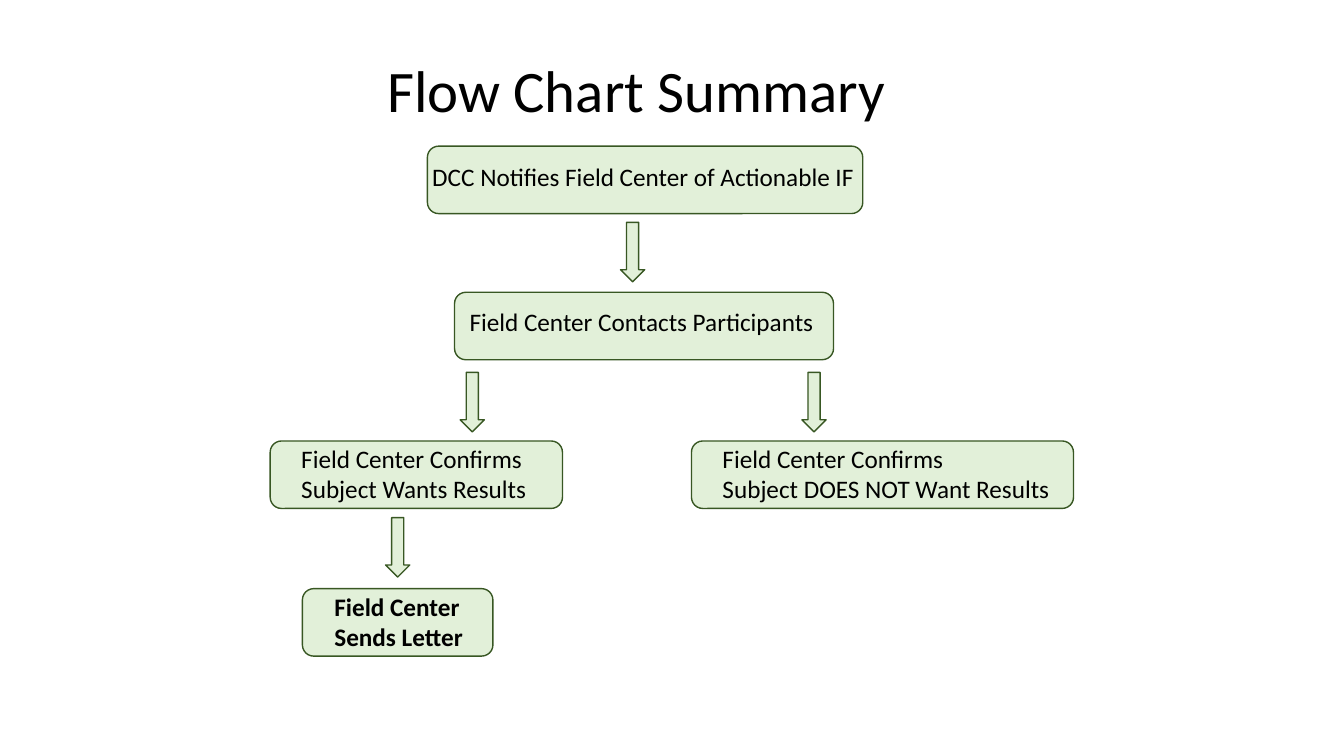
from pptx import Presentation
from pptx.dml.color import RGBColor
from pptx.enum.shapes import MSO_SHAPE
from pptx.enum.text import MSO_ANCHOR, MSO_AUTO_SIZE, PP_ALIGN
from pptx.util import Pt

FONT = "Calibri"
BLACK, PALE_GREEN, DARK_GREEN = "000000", "E2F0D9", "385723"
BOX_HEIGHT = 48.2
ARROW_LENGTH, ARROW_WIDTH = 42.5, 17.3
LABEL_HEIGHTS = {1: 28.8, 2: 51.1}

# Steps: box (left, top, width), label (left, top, width), lines, bold
STEPS = [
    ((305.3, 104.4, 311), (301.7, 111.6, 319.7),
     ["DCC Notifies Field Center of Actionable IF"], False),
    ((324.7, 208.8, 270.7), (328.3, 215.3, 262.8),
     ["Field Center Contacts Participants"], False),
    ((193, 315, 208.8), (208.1, 313.2, 178.6),
     ["Field Center Confirms", "Subject Wants Results"], False),
    ((493.9, 315, 272.9), (509, 313.2, 253.4),
     ["Field Center Confirms", "Subject DOES NOT Want Results"], False),
    ((216, 420.5, 136.1), (231.8, 419, 107.3),
     ["Field Center", "Sends Letter"], True),
]

# Arrows: left and top before the quarter turn
ARROWS = [(430.6, 171.4), (316.1, 278.6), (560.2, 278.6), (262.8, 382.3)]


def color(value):
    return RGBColor.from_string(value)


def write_lines(text_frame, lines, size, bold=False):
    text_frame.word_wrap = False
    text_frame.auto_size = MSO_AUTO_SIZE.SHAPE_TO_FIT_TEXT
    text_frame.vertical_anchor = MSO_ANCHOR.TOP
    for index, line in enumerate(lines):
        paragraph = text_frame.add_paragraph() if index else text_frame.paragraphs[0]
        paragraph.alignment = PP_ALIGN.LEFT
        run = paragraph.add_run()
        run.text = line
        run.font.name = FONT
        run.font.size = Pt(size)
        run.font.bold = bold
        run.font.color.rgb = color(BLACK)


def add_title(slide, text):
    title = slide.shapes.title
    title.left, title.top = Pt(269.3), Pt(34.6)
    title.width, title.height = Pt(381.6), Pt(58.3)
    write_lines(title.text_frame, [text], 42)


def add_green_shape(slide, kind, left, top, width, height):
    shape = slide.shapes.add_shape(kind, Pt(left), Pt(top), Pt(width), Pt(height))
    shape.shadow.inherit = False
    shape.fill.solid()
    shape.fill.fore_color.rgb = color(PALE_GREEN)
    shape.line.color.rgb = color(DARK_GREEN)
    shape.line.width = Pt(1)
    return shape


def add_step(slide, box, label, lines, bold):
    add_green_shape(slide, MSO_SHAPE.ROUNDED_RECTANGLE, *box, BOX_HEIGHT)
    left, top, width = label
    text_box = slide.shapes.add_textbox(
        Pt(left), Pt(top), Pt(width), Pt(LABEL_HEIGHTS[len(lines)]))
    write_lines(text_box.text_frame, lines, 18, bold)


def add_down_arrow(slide, left, top):
    arrow = add_green_shape(
        slide, MSO_SHAPE.RIGHT_ARROW, left, top, ARROW_LENGTH, ARROW_WIDTH)
    arrow.rotation = 90


def main():
    presentation = Presentation()
    presentation.slide_width, presentation.slide_height = Pt(960), Pt(540)
    title_only = presentation.slide_layouts[5]
    slide = presentation.slides.add_slide(title_only)

    add_title(slide, "Flow Chart Summary")
    for step in STEPS:
        add_step(slide, *step)
    for arrow in ARROWS:
        add_down_arrow(slide, *arrow)

    presentation.save("out.pptx")


if __name__ == "__main__":
    main()
